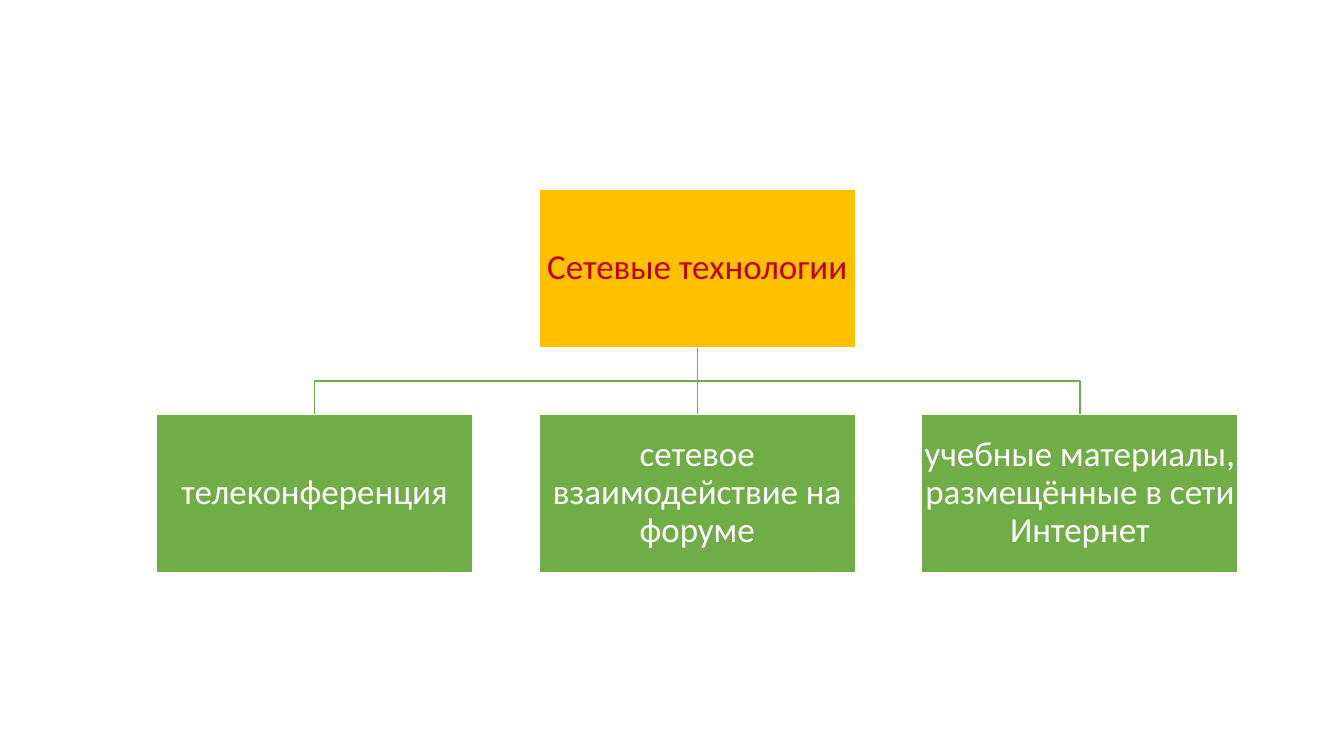
from pptx import Presentation
from pptx.dml.color import RGBColor
from pptx.enum.shapes import MSO_CONNECTOR, MSO_SHAPE
from pptx.enum.text import MSO_ANCHOR, PP_ALIGN
from pptx.util import Inches, Pt
from lxml.etree import SubElement
from pptx.oxml.ns import qn

GREEN, AMBER, RED, WHITE = "70AD47", "FFC000", "C00000", "FFFFFF"
BOX_WIDTH, BOX_HEIGHT = 3.14, 1.57
TOPICS = [
    "телеконференция",
    "сетевое взаимодействие на форуме",
    "учебные материалы, размещённые в сети Интернет",
]


def color(hex_value):
    return RGBColor.from_string(hex_value)


def set_line(shape, hex_value):
    shape.line.color.rgb = color(hex_value)
    shape.line.width = Pt(1)


def add_box(page, left, top, text, fill, text_color):
    box = page.shapes.add_shape(
        MSO_SHAPE.RECTANGLE, Inches(left), Inches(top),
        Inches(BOX_WIDTH), Inches(BOX_HEIGHT))
    box.shadow.inherit = False
    box.fill.solid()
    box.fill.fore_color.rgb = color(fill)
    set_line(box, WHITE)

    frame = box.text_frame
    frame.word_wrap = True
    frame.vertical_anchor = MSO_ANCHOR.MIDDLE
    frame.margin_left = frame.margin_right = Inches(0.02)
    frame.margin_top = frame.margin_bottom = Inches(0.02)
    para = frame.paragraphs[0]
    para.text = text
    para.alignment = PP_ALIGN.CENTER
    para.line_spacing = 0.9
    para.font.name = "Calibri"
    para.font.size = Pt(25)
    para.font.color.rgb = color(text_color)
    return box


def add_branch(page, start_x, start_y, end_x, end_y):
    """Bent line that turns halfway down."""
    middle_y = (start_y + end_y) / 2
    corners = [(start_x, middle_y), (end_x, middle_y), (end_x, end_y)]
    builder = page.shapes.build_freeform(Inches(start_x), Inches(start_y))
    builder.add_line_segments(
        [(Inches(x), Inches(y)) for x, y in corners], close=False)
    branch = builder.convert_to_shape()
    branch.shadow.inherit = False
    branch.fill.background()
    set_line(branch, GREEN)


def add_stem(page, x, start_y, end_y):
    stem = page.shapes.add_connector(
        MSO_CONNECTOR.STRAIGHT,
        Inches(x), Inches(start_y), Inches(x), Inches(end_y))
    set_line(stem, GREEN)
    SubElement(stem._element.spPr, qn("a:effectLst"))
    return stem


def add_hierarchy(page, left, top, width, height):
    step = (width - BOX_WIDTH) / (len(TOPICS) - 1)
    lefts = [left + index * step for index in range(len(TOPICS))]
    root_left = left + (width - BOX_WIDTH) / 2
    root_x = root_left + BOX_WIDTH / 2
    root_bottom = top + BOX_HEIGHT
    row_top = top + height - BOX_HEIGHT

    # Lines lie behind the boxes
    for outer_left in (lefts[-1], lefts[0]):
        add_branch(page, root_x, root_bottom,
                   outer_left + BOX_WIDTH / 2, row_top)
    stem = add_stem(page, root_x, root_bottom, row_top)

    # Root box and the row of topics
    root = add_box(page, root_left, top, "Сетевые технологии", AMBER, RED)
    topics = [add_box(page, topic_left, row_top, text, GREEN, WHITE)
              for topic_left, text in zip(lefts, TOPICS)]
    stem.begin_connect(root, 2)
    stem.end_connect(topics[1], 0)


def main():
    deck = Presentation()
    deck.slide_width, deck.slide_height = Inches(13.33), Inches(7.5)
    page = deck.slides.add_slide(deck.slide_layouts[6])
    add_hierarchy(page, 1.55, 1.88, 10.73, 3.8)
    deck.save("out.pptx")


if __name__ == "__main__":
    main()
